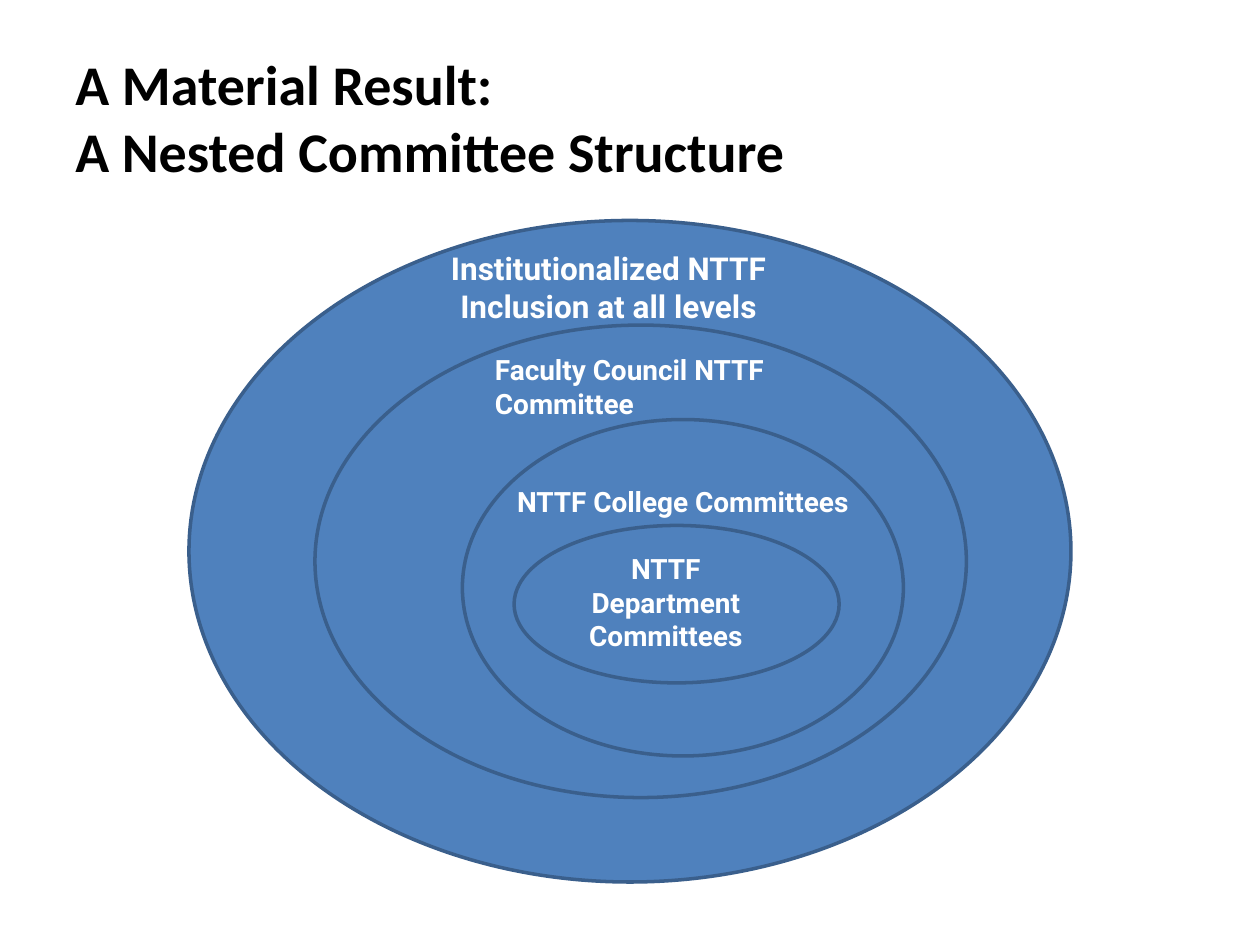
"""Build a slide of nested committees shown as ellipses."""
import pptx
import pptx.util
import pptx.dml.color
import pptx.enum.shapes
import pptx.enum.text

Inches = pptx.util.Inches
Pt = pptx.util.Pt
ALIGN = pptx.enum.text.PP_ALIGN
ANCHOR = pptx.enum.text.MSO_ANCHOR

RINGS = [
    (1.5, 1.75, 7, 5.25),
    (2.5, 2.58, 5.17, 3.75),
    (3.67, 3.33, 3.5, 2.67),
    (4.08, 4.17, 2.58, 1.25),
]
LABELS = [
    ((4.5, 4.33, 1.57, 0.91), ["NTTF Department", "Committees"], 16, ALIGN.CENTER),
    ((3.67, 3.8, 3.5, 0.37), ["NTTF College Committees"], 16, ALIGN.CENTER),
    ((3.83, 2.75, 3.18, 0.64), ["Faculty Council NTTF Committee"], 16, ALIGN.LEFT),
    ((3.25, 1.93, 3.16, 0.71), ["Institutionalized NTTF Inclusion at all levels"], 18,
     ALIGN.CENTER),
]


def color(code):
    return pptx.dml.color.RGBColor.from_string(code)


def add_ring(slide, box):
    ring = slide.shapes.add_shape(
        pptx.enum.shapes.MSO_SHAPE.OVAL, *map(Inches, box))
    ring.shadow.inherit = False
    ring.fill.solid()
    ring.fill.fore_color.rgb = color("4F81BD")
    ring.line.color.rgb = color("3A5F8C")
    ring.line.width = Pt(2)


def add_text(slide, box, lines, size, align=ALIGN.LEFT, face="Roboto",
             ink="FFFFFF", anchor=ANCHOR.TOP):
    frame = slide.shapes.add_textbox(*map(Inches, box)).text_frame
    frame.word_wrap = True
    frame.vertical_anchor = anchor
    frame.text = "\n".join(lines)
    for para in frame.paragraphs:
        para.alignment = align
        para.font.name = face
        para.font.size = Pt(size)
        para.font.bold = True
        para.font.color.rgb = color(ink)


def main():
    deck = pptx.Presentation()
    deck.slide_width, deck.slide_height = Inches(10), Inches(7.5)
    slide = deck.slides.add_slide(deck.slide_layouts[6])
    add_text(slide, (0.5, 0.3, 9, 1.25),
             ["A Material Result:\vA Nested Committee Structure"], 32,
             face="Calibri", ink="000000", anchor=ANCHOR.MIDDLE)
    for box in RINGS:
        add_ring(slide, box)
    for box, lines, size, align in LABELS:
        add_text(slide, box, lines, size, align)
    deck.save("out.pptx")


if __name__ == "__main__":
    main()
